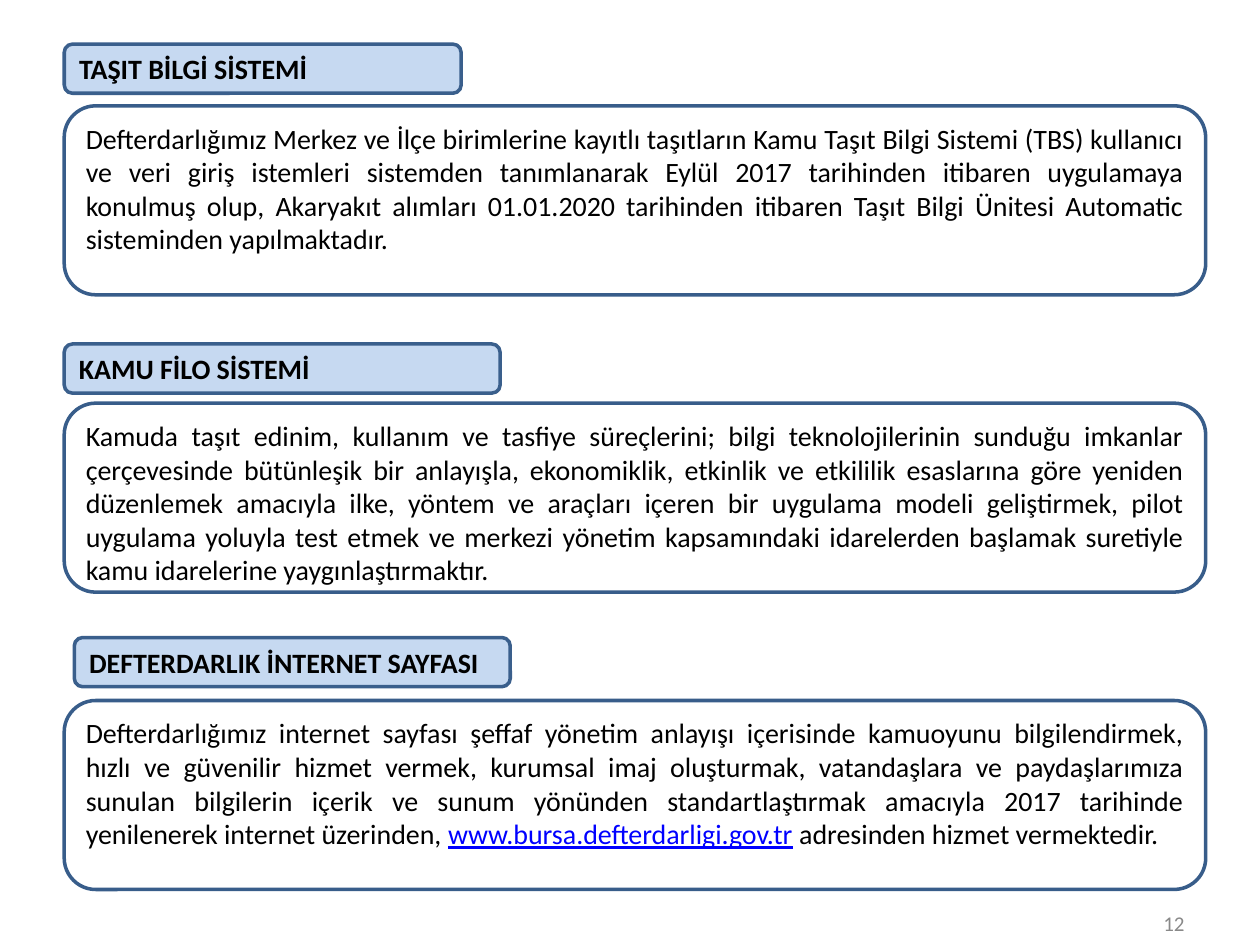
import pptx
import pptx.util
import pptx.dml.color
import pptx.enum.shapes
import pptx.enum.text

Inch = pptx.util.Inches
ALIGN = pptx.enum.text.PP_ALIGN
ANCHOR = pptx.enum.text.MSO_ANCHOR
ROUND = pptx.enum.shapes.MSO_SHAPE.ROUNDED_RECTANGLE

# Content: heading, heading left, top and width, then body runs (text, style)
PARTS = [
    ("TAŞIT BİLGİ SİSTEMİ", (0.51, 0.35, 3.15), [
        ("Defterdarlığımız Merkez ve İlçe birimlerine kayıtlı taşıtların Kamu Taşıt "
         "Bilgi Sistemi (TBS) kullanıcı ve veri giriş istemleri sistemden tanımlanarak "
         "Eylül 2017 tarihinden itibaren uygulamaya konulmuş olup, Akaryakıt alımları "
         "01.01.2020 tarihinden itibaren Taşıt Bilgi Ünitesi Automatic sisteminden "
         "yapılmaktadır.", "body")]),
    ("KAMU FİLO SİSTEMİ", (0.51, 2.73, 3.46), [
        ("Kamuda taşıt edinim, kullanım ve tasfiye süreçlerini; bilgi teknolojilerinin "
         "sunduğu imkanlar çerçevesinde bütünleşik bir anlayışla, ekonomiklik, etkinlik "
         "ve etkililik esaslarına göre yeniden düzenlemek amacıyla ilke, yöntem ve "
         "araçları içeren bir uygulama modeli geliştirmek, pilot uygulama yoluyla test "
         "etmek ve merkezi yönetim kapsamındaki idarelerden başlamak suretiyle kamu "
         "idarelerine yaygınlaştırmaktır.", "body")]),
    ("DEFTERDARLIK İNTERNET SAYFASI", (0.59, 5.06, 3.46), [
        ("Defterdarlığımız internet sayfası şeffaf yönetim anlayışı içerisinde kamuoyunu "
         "bilgilendirmek, hızlı ve güvenilir hizmet vermek, kurumsal imaj oluşturmak, "
         "vatandaşlara ve paydaşlarımıza sunulan bilgilerin içerik ve sunum yönünden "
         "standartlaştırmak amacıyla 2017 tarihinde yenilenerek internet üzerinden, ",
         "body"),
        ("www.bursa.defterdarligi.gov.tr", "web"),
        (" adresinden hizmet vermektedir.", "body")]),
]
PAGE = "12"

# Look
COLORS = {"text": "000000", "web": "0000FF", "page": "898989",
          "head": "C6D9F1", "edge": "3A5F8C", "frame": "385D8A"}
STYLES = {
    "head": ("text", {"size": 16, "bold": True}),
    "body": ("text", {"size": 16}),
    "web": ("web", {"size": 16, "underline": True}),
    "page": ("page", {"size": 12}),
}
LEFT, TOP, WIDE, HIGH, STEP = 0.51, 0.84, 9.06, 1.5, 2.36
BAR = 0.39


def color(name):
    return pptx.dml.color.RGBColor.from_string(COLORS[name])


def write(shape, runs, align, anchor):
    frame = shape.text_frame
    frame.word_wrap = True
    frame.vertical_anchor = anchor
    para = frame.paragraphs[0]
    para.alignment = align
    for text, style in runs:
        run = para.add_run()
        run.text = text
        tint, form = STYLES[style]
        run.font.name = "Calibri"
        run.font.color.rgb = color(tint)
        for key, value in form.items():
            setattr(run.font, key, pptx.util.Pt(value) if key == "size" else value)


def panel(slide, box, edge, fill=None):
    shape = slide.shapes.add_shape(ROUND, *map(Inch, box))
    shape.shadow.inherit = False
    shape.line.color.rgb = color(edge)
    shape.line.width = pptx.util.Pt(2)
    if fill:
        shape.fill.solid()
        shape.fill.fore_color.rgb = color(fill)
    else:
        shape.fill.background()
    return shape


def main():
    deck = pptx.Presentation()
    deck.slide_width, deck.slide_height = Inch(10), Inch(7.5)
    slide = deck.slides.add_slide(deck.slide_layouts[6])

    # Heading bars with their framed texts, one pair per row
    for row, (title, place, runs) in enumerate(PARTS):
        bar = panel(slide, (*place, BAR), "edge", "head")
        write(bar, [(title, "head")], ALIGN.LEFT, ANCHOR.MIDDLE)
        body = panel(slide, (LEFT, TOP + row * STEP, WIDE, HIGH), "frame")
        write(body, runs, ALIGN.JUSTIFY, ANCHOR.TOP)

    # Page number
    page = slide.shapes.add_textbox(*map(Inch, (7.17, 7.13, 2.33, 0.4)))
    write(page, [(PAGE, "page")], ALIGN.RIGHT, ANCHOR.MIDDLE)

    deck.save("out.pptx")


if __name__ == "__main__":
    main()
